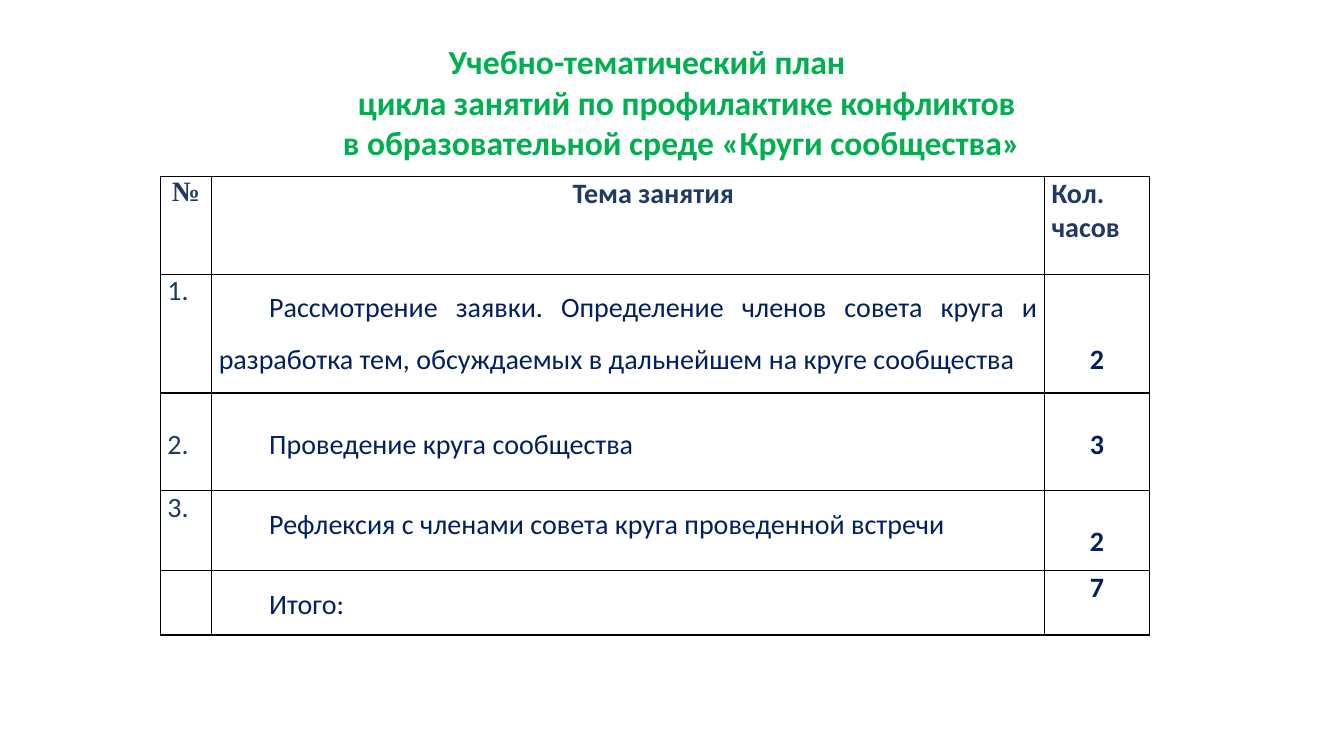
from lxml.etree import SubElement
from pptx import Presentation
from pptx.dml.color import RGBColor
from pptx.enum.text import MSO_ANCHOR, PP_ALIGN
from pptx.oxml.ns import qn
from pptx.util import Inches, Pt

GREEN, SLATE, NAVY, BLACK = "00B050", "203864", "002060", "000000"
LEFT, CENTER, JUSTIFY = PP_ALIGN.LEFT, PP_ALIGN.CENTER, PP_ALIGN.JUSTIFY
LINE_HEIGHT = 0.34


def write(para, text, size, color, bold, face="Calibri", **layout):
    for name, value in layout.items():
        setattr(para, name, value)
    span = para.add_run()
    span.text = text
    for name, value in {"size": Pt(size), "bold": bold, "name": face}.items():
        setattr(span.font, name, value)
    span.font.color.rgb = RGBColor.from_string(color)


def indent(para, left, first):
    properties = para._p.get_or_add_pPr()
    properties.set("marL", str(Inches(left)))
    properties.set("indent", str(Inches(first)))


deck = Presentation()
deck.slide_width, deck.slide_height = Inches(13.33), Inches(7.5)
page = deck.slides.add_slide(deck.slide_layouts[5])

title = page.shapes.title
title_place = {"left": 3.3, "top": 0.4, "width": 8, "height": 1.22}
for name, value in title_place.items():
    setattr(title, name, Inches(value))
frame = title.text_frame
frame.word_wrap = True
frame.vertical_anchor = MSO_ANCHOR.MIDDLE
frame.margin_top = frame.margin_bottom = 0
title_lines = [
    ("Учебно-тематический план", 1.05),
    ("цикла занятий по профилактике конфликтов", 0.15),
    ("в образовательной среде «Круги сообщества»", 0),
]
for number, (text, left) in enumerate(title_lines):
    para = frame.add_paragraph() if number else frame.paragraphs[0]
    write(para, text, 24, GREEN, True, alignment=LEFT)
    indent(para, left, 0)

widths = [0.51, 8.26, 1.04]
heights = [0.97, 1.18, 0.97, 0.79, 0.64]
header = ["№", "Тема занятия", "Кол. часов"]
lessons = [
    ("1.", "Рассмотрение заявки. Определение членов совета круга и разработка тем, "
           "обсуждаемых в дальнейшем на круге сообщества", "2"),
    ("2.", "Проведение круга сообщества", "3"),
    ("3.", "Рефлексия с членами совета круга проведенной встречи", "2"),
    ("", "Итого:", "7"),
]
lines_above = [(0, 0, 0), (0, 0, 2), (1, 1, 1), (0, 0, 1), (0, 0, 0)]
header_formats = [
    {"face": "Times New Roman", "alignment": CENTER},
    {"alignment": CENTER},
    {"alignment": JUSTIFY},
]
lesson_formats = [
    {"color": SLATE, "bold": False, "alignment": LEFT},
    {"color": NAVY, "bold": False, "alignment": JUSTIFY},
    {"color": NAVY, "bold": True, "alignment": CENTER},
]

plan = page.shapes.add_table(
    len(heights), len(widths), Inches(1.59), Inches(1.75),
    Inches(sum(widths)), Inches(sum(heights))).table
plan.first_row = plan.horz_banding = False
for column, width in zip(plan.columns, widths):
    column.width = Inches(width)
for row, height in zip(plan.rows, heights):
    row.height = Inches(height)

for row, texts in enumerate([header, *lessons]):
    for column, text in enumerate(texts):
        cell = plan.cell(row, column)
        margins = {"left": 0.07, "right": 0.07, "bottom": 0,
                   "top": lines_above[row][column] * LINE_HEIGHT}
        for side, value in margins.items():
            setattr(cell, f"margin_{side}", Inches(value))
        for edge in ("lnL", "lnR", "lnT", "lnB"):
            border = SubElement(cell._tc.get_or_add_tcPr(), qn(f"a:{edge}"), w=str(Pt(1)))
            SubElement(SubElement(border, qn("a:solidFill")), qn("a:srgbClr"), val=BLACK)
        cell.fill.background()
        if not text:
            continue
        para = cell.text_frame.paragraphs[0]
        if row == 0:
            write(para, text, 20, SLATE, True, **header_formats[column])
        else:
            write(para, text, 20, **lesson_formats[column])
        if column == 1:
            indent(para, 0, 0.5)
            if row in (1, 3, 4):
                para.line_spacing = 1.5

deck.save("out.pptx")
